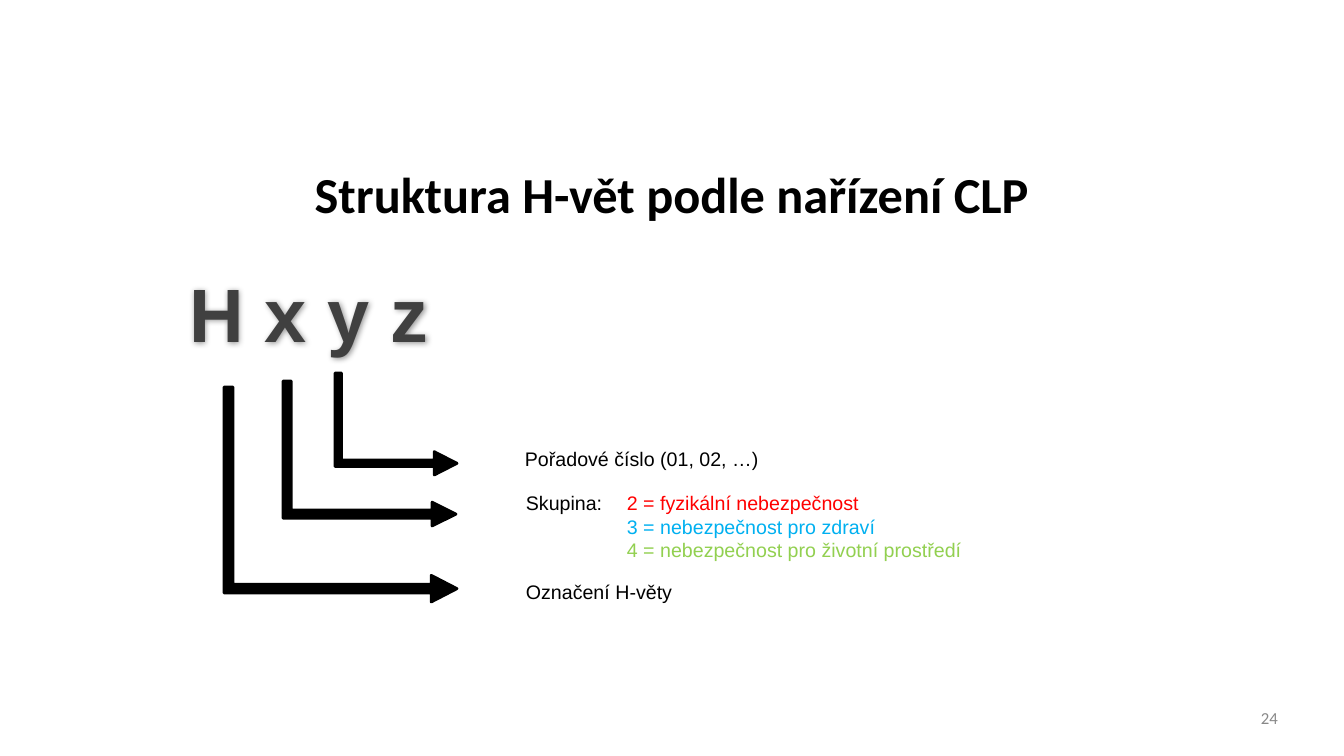
from lxml import etree
from pptx import Presentation
from pptx import util as u
from pptx.dml.color import RGBColor
from pptx.enum import shapes, text
from pptx.oxml.ns import qn

COLORS = {
    "black": "000000", "letters": "404040", "number": "888888", "shadow": "000000",
    "physical": "FF0000", "health": "00B0F0", "environment": "92D050",
}
PX_PER_INCH = 100.8
TAB_PX = 101


def px(length):
    return u.Emu(round(length * 914400 / PX_PER_INCH))


def color(name):
    return RGBColor.from_string(COLORS[name])


class SlideBuilder:
    def __init__(self, presentation):
        self.slide = presentation.slides.add_slide(presentation.slide_layouts[6])

    def text(self, box, lines, size, font="Arial", bold=False,
             align=text.PP_ALIGN.LEFT, anchor=text.MSO_ANCHOR.TOP, spacing=1.0):
        """Each line is a list of (wording, colour name) runs."""
        shape = self.slide.shapes.add_textbox(*map(px, box))
        frame = shape.text_frame
        frame.word_wrap = True
        frame.vertical_anchor = anchor
        for index, runs in enumerate(lines):
            paragraph = frame.add_paragraph() if index else frame.paragraphs[0]
            paragraph.alignment = align
            paragraph.line_spacing = spacing
            if any("\t" in wording for wording, _ in runs):
                self.tab_stop(paragraph)
            for wording, color_name in runs:
                run = paragraph.add_run()
                run.text = wording
                run.font.name = font
                run.font.size = u.Pt(size)
                run.font.bold = bold
                run.font.color.rgb = color(color_name)
        return shape

    def tab_stop(self, paragraph):
        properties = paragraph._p.get_or_add_pPr()
        tabs = etree.SubElement(properties, qn("a:tabLst"))
        etree.SubElement(tabs, qn("a:tab"), pos=str(px(TAB_PX)), algn="l")

    def soft_shadow(self, shape):
        effects = etree.SubElement(shape._element.spPr, qn("a:effectLst"))
        shadow = etree.SubElement(effects, qn("a:outerShdw"), blurRad=str(px(6)),
                                  dist=str(px(1)), dir="2700000", algn="tl")
        tint = etree.SubElement(shadow, qn("a:srgbClr"), val=COLORS["shadow"])
        etree.SubElement(tint, qn("a:alpha"), val="40000")

    def bent_arrow(self, box, adjustments):
        """Arrow that runs down and then right; box is its frame before rotation."""
        shape = self.slide.shapes.add_shape(
            shapes.MSO_SHAPE.BENT_UP_ARROW, *map(px, box))
        shape.rotation = 90
        for index, value in enumerate(adjustments):
            shape.adjustments[index] = value
        shape.shadow.inherit = False
        shape.fill.solid()
        shape.fill.fore_color.rgb = color("black")
        shape.line.color.rgb = color("black")
        shape.line.width = u.Pt(2)


def main():
    presentation = Presentation()
    presentation.slide_width = px(1344)
    presentation.slide_height = px(756)
    builder = SlideBuilder(presentation)

    builder.text((22, 116, 1300, 113), [[("Struktura H-vět podle nařízení CLP", "black")]],
                 36, "Calibri", True, text.PP_ALIGN.CENTER, text.MSO_ANCHOR.BOTTOM, 0.9)
    builder.text((1251, 701, 68, 34), [[("24", "number")]], 12, "Calibri",
                 anchor=text.MSO_ANCHOR.MIDDLE)
    code = builder.text((149, 262, 320, 102), [[("H x y z", "letters")]], 54,
                        bold=True, align=text.PP_ALIGN.CENTER)
    builder.soft_shadow(code)

    for box, adjustments in (
        ((233, 378, 215, 233), (0.041, 0.062, 0.12)),
        ((297, 367, 145, 173), (0.056, 0.082, 0.165)),
        ((345, 363, 102, 122), (0.063, 0.114, 0.223)),
    ):
        builder.bent_arrow(box, adjustments)

    groups = [
        [("Skupina: \t", "black"), ("2 = fyzikální nebezpečnost", "physical")],
        [("\t", "black"), ("3 = nebezpečnost pro zdraví", "health")],
        [("\t", "black"), ("4 = nebezpečnost pro životní prostředí", "environment")],
    ]
    for box, lines in (
        ((516, 575, 225, 34), [[("Označení H-věty", "black")]]),
        ((516, 486, 477, 82), groups),
        ((515, 442, 261, 34), [[("Pořadové číslo (01, 02, …)", "black")]]),
    ):
        builder.text(box, lines, 14)

    presentation.save("out.pptx")


if __name__ == "__main__":
    main()
